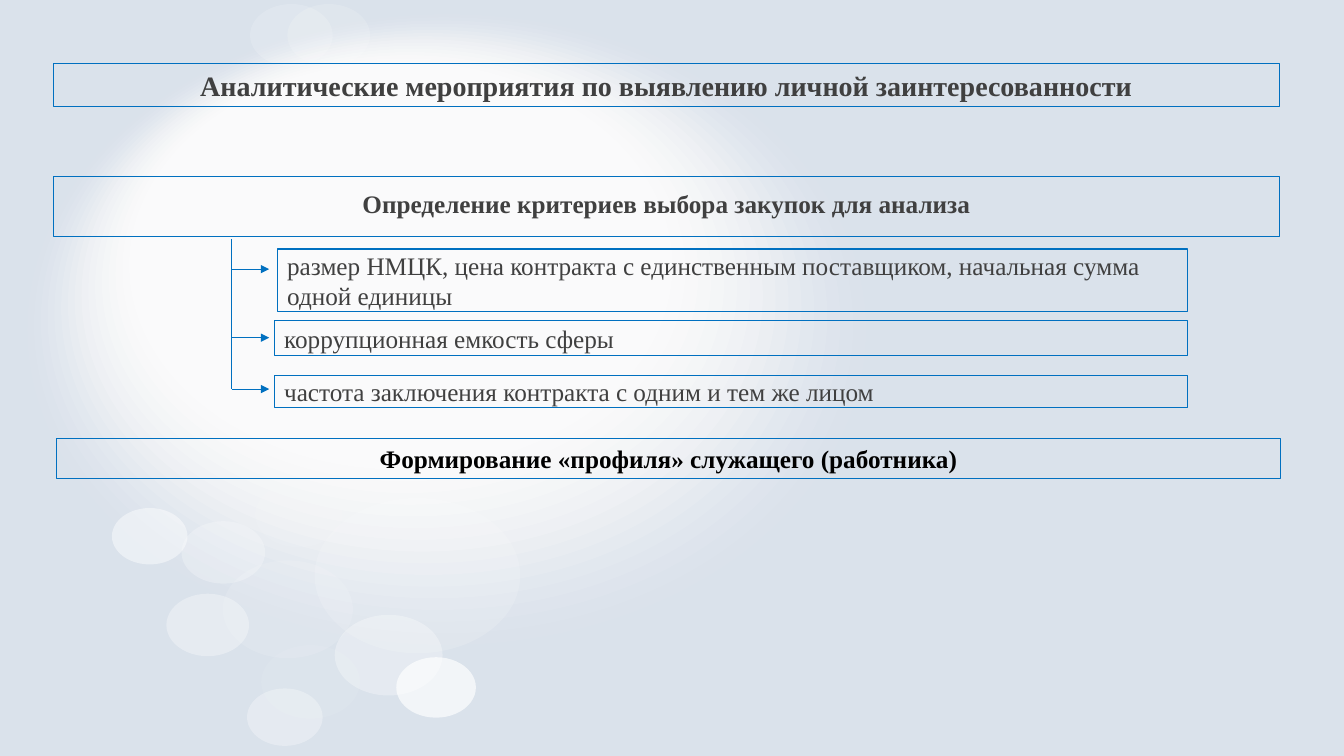
from lxml import etree
from pptx import Presentation
from pptx.dml.color import RGBColor
from pptx.enum.shapes import MSO_CONNECTOR, MSO_SHAPE
from pptx.enum.text import MSO_ANCHOR, MSO_AUTO_SIZE, PP_ALIGN
from pptx.oxml.ns import qn
from pptx.util import Inches, Pt

OVAL, RECTANGLE = MSO_SHAPE.OVAL, MSO_SHAPE.RECTANGLE
STRAIGHT = MSO_CONNECTOR.STRAIGHT
MIDDLE, NO_AUTOFIT = MSO_ANCHOR.MIDDLE, MSO_AUTO_SIZE.NONE
LEFT, CENTER = PP_ALIGN.LEFT, PP_ALIGN.CENTER

GLOW_OUTER = (0.27, 0.14, 8.32, 6.26, 3)
GLOW_INNER = (1.28, 0.61, 5.39, 4.05, 27)
GLOW_STEPS = 15

BUBBLES = [
    (2.21, 5.56, 1.29, 0.97, 12),
    (3.12, 4.94, 2.04, 1.54, 15),
    (1.11, 5.04, 0.75, 0.56, 45),
    (2.53, 4.78, 0.87, 0.65, 8),
    (1.80, 5.17, 0.83, 0.62, 25),
    (1.65, 5.89, 0.82, 0.62, 33),
    (2.59, 6.40, 0.98, 0.73, 7),
    (2.45, 6.83, 0.75, 0.57, 31),
    (3.93, 6.52, 0.79, 0.60, 67),
    (3.32, 6.10, 1.07, 0.80, 31),
    (2.85, 0.04, 0.82, 0.62, 15),
    (2.48, 0.04, 0.82, 0.62, 16),
]

CRITERIA = [
    ("размер НМЦК, цена контракта с единственным поставщиком, "
     "начальная сумма одной единицы", (2.75, 2.47, 9.03, 0.62), 2.67),
    ("коррупционная емкость сферы", (2.72, 3.18, 9.06, 0.35), 3.35),
    ("частота заключения контракта с одним и тем же лицом",
     (2.72, 3.73, 9.06, 0.31), 3.86),
]
STEM_X, STEM_TOP, ARROW_END = 2.3, 2.37, 2.67


def color(value):
    return RGBColor.from_string(value)


def apply(target, formats):
    for attribute, value in formats.items():
        setattr(target, attribute, value)


class SlideBuilder:
    backdrop = "DAE2EB"
    light = "FFFFFF"
    accent = "0070C0"
    ink = "404040"
    font = "Times New Roman"
    stroke = Pt(0.75)

    def __init__(self, presentation):
        self.layout = presentation.slide_layouts[5]
        self.slide = presentation.slides.add_slide(self.layout)
        fill = self.slide.background.fill
        fill.solid()
        fill.fore_color.rgb = color(self.backdrop)

    def bubble(self, left, top, width, height, opacity):
        oval = self.slide.shapes.add_shape(
            OVAL, *map(Inches, (left, top, width, height)))
        oval.shadow.inherit = False
        oval.line.fill.background()
        oval.fill.solid()
        oval.fill.fore_color.rgb = color(self.light)
        tint = oval.element.spPr.find(".//" + qn("a:srgbClr"))
        etree.SubElement(tint, qn("a:alpha")).set("val", str(round(opacity * 1000)))
        self.layout.shapes.element.append(oval.element)

    def outline(self, line):
        line.color.rgb = color(self.accent)
        line.width = self.stroke

    def fill_text(self, box, text, area, size=18, bold=False,
                  align=CENTER, ink=None, spacing=1.0):
        apply(box, dict(zip(("left", "top", "width", "height"), map(Inches, area))))
        self.outline(box.line)
        frame = box.text_frame
        apply(frame, {"text": text, "word_wrap": True, "auto_size": NO_AUTOFIT,
                      "vertical_anchor": MIDDLE})
        paragraph = frame.paragraphs[0]
        apply(paragraph, {"alignment": align, "line_spacing": spacing})
        font = paragraph.runs[0].font
        apply(font, {"name": self.font, "size": Pt(size), "bold": bold})
        font.color.rgb = color(ink or self.ink)

    def title(self, text, area):
        self.fill_text(self.slide.shapes.title, text, area, size=20, bold=True)

    def box(self, text, area, **style):
        shape = self.slide.shapes.add_shape(RECTANGLE, *map(Inches, area))
        shape.shadow.inherit = False
        shape.fill.background()
        self.fill_text(shape, text, area, **style)

    def connector(self, start, end, arrow=False):
        link = self.slide.shapes.add_connector(
            STRAIGHT, *map(Inches, (*start, *end)))
        self.outline(link.line)
        properties = link.element.spPr
        if arrow:
            tail = etree.SubElement(properties.find(qn("a:ln")), qn("a:tailEnd"))
            tail.set("type", "triangle")
        etree.SubElement(properties, qn("a:effectLst"))


def main():
    presentation = Presentation()
    presentation.slide_width = Inches(13.33)
    presentation.slide_height = Inches(7.5)
    page = SlideBuilder(presentation)

    for step in range(GLOW_STEPS + 1):
        page.bubble(*(outer + (inner - outer) * step / GLOW_STEPS
                      for outer, inner in zip(GLOW_OUTER, GLOW_INNER)))
    for bubble in BUBBLES:
        page.bubble(*bubble)

    page.title("Аналитические мероприятия по выявлению личной заинтересованности",
               (0.53, 0.63, 12.16, 0.43))
    page.box("Определение критериев выбора закупок для анализа",
             (0.53, 1.75, 12.16, 0.6), bold=True, spacing=0.8)
    for criterion, area, arrow_y in CRITERIA:
        page.box(criterion, area, align=LEFT)
        page.connector((STEM_X, arrow_y), (ARROW_END, arrow_y), arrow=True)
    page.connector((STEM_X, STEM_TOP), (STEM_X, CRITERIA[-1][-1]))
    page.box("Формирование «профиля» служащего (работника)",
             (0.56, 4.35, 12.14, 0.4), bold=True, ink="000000")

    presentation.save("out.pptx")


if __name__ == "__main__":
    main()
